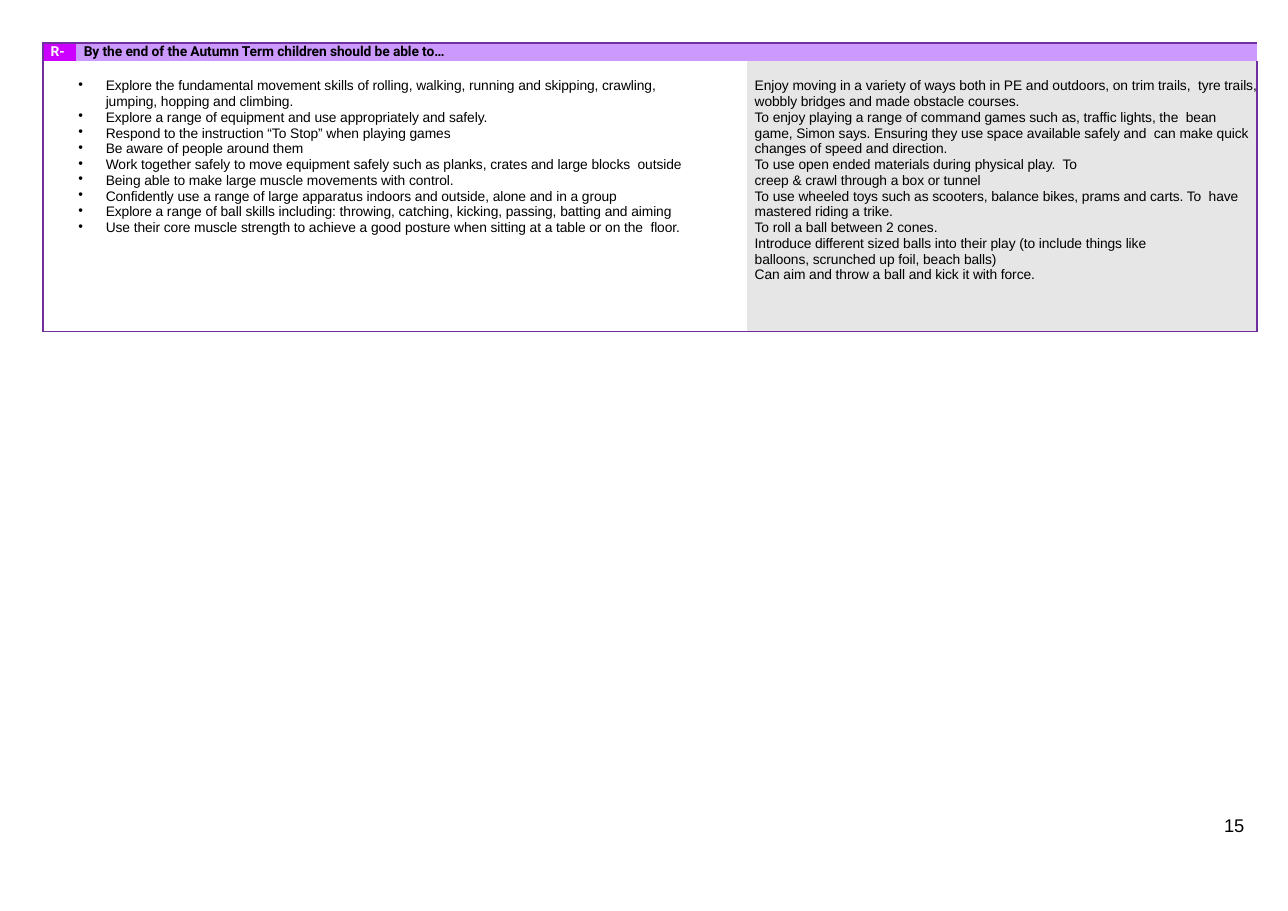
import pptx
import pptx.util
import pptx.dml.color
import pptx.oxml
import pptx.oxml.ns
from dataclasses import dataclass

PX = 9144  # 100 px to the inch


@dataclass(frozen=True)
class Theme:
    black: str = "000000"
    white: str = "FFFFFF"
    pink: str = "CC00FF"
    lilac: str = "CC99FF"
    grey: str = "E7E6E6"
    edge: str = "6F2F9F"
    body: str = "Arial"
    head: str = "Roboto"
    small: int = 9
    large: int = 12


THEME = Theme()
NO_GRID = "{2D5ABB26-0587-4C30-8999-92F81FD0307C}"

# Each entry is a line of text and its right margin in px.
SKILLS = [
    ("Explore the fundamental movement skills of rolling, walking, running and skipping, crawling,  "
     "jumping, hopping and climbing.", 60),
    ("Explore a range of equipment and use appropriately and safely.", 0),
    ("Respond to the instruction “To Stop” when playing games", 0),
    ("Be aware of people around them", 0),
    ("Work together safely to move equipment safely such as planks, crates and large blocks  outside", 0),
    ("Being able to make large muscle movements with control.", 0),
    ("Confidently use a range of large apparatus indoors and outside, alone and in a group", 0),
    ("Explore a range of ball skills including: throwing, catching, kicking, passing, batting and aiming", 0),
    ("Use their core muscle strength to achieve a good posture when sitting at a table or on the  floor.", 0),
]
TASKS = [
    ("Enjoy moving in a variety of ways both in PE and outdoors, on trim trails,  tyre trails, "
     "wobbly bridges and made obstacle courses.", 0),
    ("To enjoy playing a range of command games such as, traffic lights, the  bean game, Simon says. "
     "Ensuring they use space available safely and  can make quick changes of speed and direction.", 0),
    ("To use open ended materials during physical play.  To creep & crawl through a box or tunnel", 150),
    ("To use wheeled toys such as scooters, balance bikes, prams and carts. To  have mastered "
     "riding a trike.", 0),
    ("To roll a ball between 2 cones.", 0),
    ("Introduce different sized balls into their play (to include things like  balloons, "
     "scrunched up foil, beach balls)", 75),
    ("Can aim and throw a ball and kick it with force.", 0),
]


def put(item, **values):
    for name, value in values.items():
        setattr(item, name, value)


def pad(box, top):
    put(box, margin_left=0, margin_right=0, margin_top=top * PX, margin_bottom=0)


def write(frame, lines, font, left, hang=0, space=None, track=0):
    """Fill a frame with (text, right margin) lines; a hang adds bullets."""
    for i, (text, right) in enumerate(lines):
        para = frame.paragraphs[0] if i == 0 else frame.add_paragraph()
        if space:
            para.line_spacing = space
        props = para._p.get_or_add_pPr()
        props.set("marL", str(left * PX))
        props.set("marR", str(right * PX))
        props.set("indent", str(-hang * PX))
        if hang:
            mark = pptx.oxml.ns.qn("a:buChar")
            props.append(props.makeelement(mark, {"char": "•"}))
        run = para.add_run()
        run.text = text
        color = pptx.dml.color.RGBColor.from_string(font["color"])
        run.font.color.rgb = color
        put(run.font, name=font["name"], size=pptx.util.Pt(font["size"]), bold=font["bold"])
        run._r.get_or_add_rPr().set("spc", str(track))


def paint(cell, color):
    if color:
        cell.fill.solid()
        cell.fill.fore_color.rgb = pptx.dml.color.RGBColor.from_string(color)
    else:
        cell.fill.background()


def rule(cell, sides):
    """Draw the given sides (L, R, T, B) of a cell; borders precede its fill."""
    props = cell._tc.get_or_add_tcPr()
    for i, side in enumerate(sides):
        line = pptx.oxml.parse_xml(
            f'<a:ln{side} {pptx.oxml.ns.nsdecls("a")} w="12700"><a:solidFill>'
            f'<a:srgbClr val="{THEME.edge}"/></a:solidFill></a:ln{side}>')
        props.insert(i, line)


def draw_table(slide, left, top, width, height):
    shape = slide.shapes.add_table(2, 3, left * PX, top * PX, width * PX, height * PX)
    table = shape.table
    put(table, first_row=False, horz_banding=False)
    table._tbl.tblPr.find(pptx.oxml.ns.qn("a:tableStyleId")).text = NO_GRID
    for col, size in zip(table.columns, (30, 609, width - 639)):
        col.width = size * PX
    for row, size in zip(table.rows, (16, height - 16)):
        row.height = size * PX

    fills = [(THEME.pink, THEME.lilac, THEME.lilac), (None, None, THEME.grey)]
    for r, row in enumerate(fills):
        for c, color in enumerate(row):
            cell = table.cell(r, c)
            pad(cell, 16 if r else 1)
            paint(cell, color)
            edges = {"L": c == 0, "R": c == 2, "T": r == 0, "B": r == 1}
            rule(cell, [side for side, on in edges.items() if on])
    table.cell(0, 1).merge(table.cell(0, 2))
    table.cell(1, 0).merge(table.cell(1, 1))

    head = dict(name=THEME.head, size=THEME.small, bold=True)
    heads = [("R-", THEME.white), ("By the end of the Autumn Term children should be able to…", THEME.black)]
    for c, (text, color) in enumerate(heads):
        write(table.cell(0, c).text_frame, [(text, 0)], dict(head, color=color), 7,
              space=pptx.util.Pt(10.1), track=-5)
    body = dict(name=THEME.body, size=THEME.small, bold=False, color=THEME.black)
    write(table.cell(1, 0).text_frame, SKILLS, body, 57, hang=25, space=1.02, track=-5)
    write(table.cell(1, 2).text_frame, TASKS, body, 7, space=1.02, track=-5)


def draw_number(slide, left, top, width, height):
    box = slide.shapes.add_textbox(left * PX, top * PX, width * PX, height * PX)
    frame = box.text_frame
    frame.word_wrap = True
    pad(frame, 2)
    font = dict(name=THEME.body, size=THEME.large, bold=False, color=THEME.black)
    write(frame, [("15", 0)], font, 4)


def main():
    deck = pptx.Presentation()
    put(deck, slide_width=1169 * PX, slide_height=827 * PX)
    slide = deck.slides.add_slide(deck.slide_layouts[6])
    draw_number(slide, 1107, 737, 27, 23)
    draw_table(slide, 39, 39, 1102, 262)
    deck.save("out.pptx")


if __name__ == "__main__":
    main()
